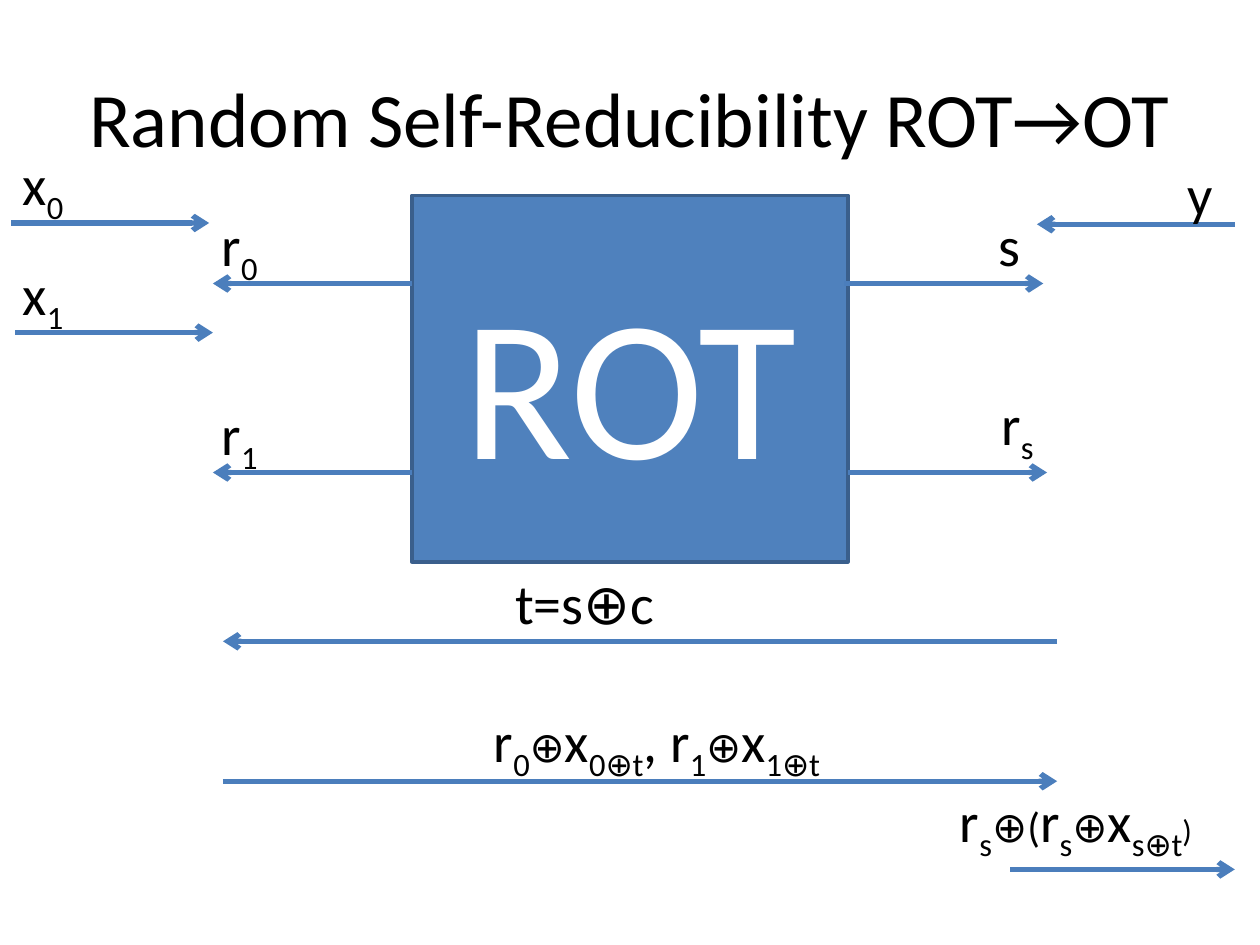
"""Build a slide showing how random oblivious transfer reduces to oblivious transfer."""
from dataclasses import dataclass
from typing import Optional

from lxml import etree
from pptx import Presentation
from pptx import util as u
from pptx.dml.color import RGBColor
from pptx.enum import shapes, text
from pptx.oxml.ns import qn

FONT = "Calibri"
BLACK = RGBColor(0x00, 0x00, 0x00)
WHITE = RGBColor(0xFF, 0xFF, 0xFF)
BOX_FILL = RGBColor(0x4F, 0x81, 0xBD)
BOX_LINE = RGBColor(0x3A, 0x5F, 0x8C)
ARROW_BLUE = RGBColor(0x4B, 0x7E, 0xBC)

COLUMNS, ROWS = 100, 75
WIDTH, HEIGHT = u.Inches(10), u.Inches(7.5)
LABEL_HEIGHT = 6.4
BOX_LEFT, BOX_RIGHT = 32.7, 67.3
SENDER, RECEIVER = 17.7, 83.9
UPPER_ROW, LOWER_ROW = 22.5, 37.5


@dataclass(frozen=True)
class Piece:
    """A stretch of label text, optionally resized or lowered."""
    content: str
    size: Optional[int] = None
    lowered: bool = False


@dataclass(frozen=True)
class Label:
    """A formula with its left, top and width on the grid."""
    left: float
    top: float
    width: float
    pieces: tuple[Piece, ...]
    wrap: bool = False


@dataclass(frozen=True)
class Arrow:
    """A horizontal arrow on one grid row, pointing at its end column."""
    start: float
    end: float
    row: float


def indexed(letter: str, index: str) -> tuple[Piece, Piece]:
    """Return a letter with a subscript."""
    return Piece(letter), Piece(index, lowered=True)


XOR = Piece("⊕", 24)

ARROWS = (
    Arrow(67, 82.8, UPPER_ROW),
    Arrow(BOX_RIGHT, 83.1, LOWER_ROW),
    Arrow(BOX_LEFT, 16.9, UPPER_ROW),
    Arrow(BOX_LEFT, 16.9, LOWER_ROW),
    Arrow(0.9, 16.6, 17.7),
    Arrow(1.2, 16.9, 26.4),
    Arrow(98, 82.3, 17.8),
    Arrow(RECEIVER, SENDER, 50.9),
    Arrow(SENDER, RECEIVER, 62),
    Arrow(80.2, 98, 69),
)

LABELS = (
    Label(0.8, 11.4, 5.5, indexed("x", "0")),
    Label(0.8, 20.1, 5.5, indexed("x", "1")),
    Label(16.6, 16.2, 5.1, indexed("r", "0")),
    Label(16.6, 31.2, 5.1, indexed("r", "1")),
    Label(78.3, 16.2, 3.8, (Piece("s"),)),
    Label(78.5, 30.4, 4.7, indexed("r", "s")),
    Label(93.3, 12.2, 4.1, (Piece("y"),)),
    Label(39.9, 44.6, 26, (Piece("t=s⊕c"),), wrap=True),
    Label(38.2, 55.6, 29.9,
          (*indexed("r", "0"), XOR, *indexed("x", "0⊕t"),
           *indexed(", r", "1"), XOR, *indexed("x", "1⊕t")), wrap=True),
    Label(75.2, 61.9, 22.8,
          (*indexed("r", "s"), Piece("⊕(", 24), *indexed("r", "s"), XOR,
           *indexed("x", "s⊕t"), Piece(")", 18)), wrap=True),
)


def across(columns: float) -> u.Emu:
    """Convert grid columns to a length."""
    return u.Emu(round(WIDTH * columns / COLUMNS))


def down(rows: float) -> u.Emu:
    """Convert grid rows to a length."""
    return u.Emu(round(HEIGHT * rows / ROWS))


def place(left: float, top: float, width: float, height: float) -> tuple[u.Emu, ...]:
    """Convert a grid rectangle to lengths."""
    return across(left), down(top), across(width), down(height)


def style_paragraph(paragraph, size: int, color: RGBColor, alignment) -> None:
    """Set the font and alignment of a paragraph."""
    paragraph.alignment = alignment
    paragraph.font.name = FONT
    paragraph.font.size = u.Pt(size)
    paragraph.font.color.rgb = color


def write_centred(shape, content: str, size: int, color: RGBColor) -> None:
    """Write one line in the middle of a shape."""
    frame = shape.text_frame
    frame.word_wrap = True
    frame.vertical_anchor = text.MSO_ANCHOR.MIDDLE
    frame.text = content
    style_paragraph(frame.paragraphs[0], size, color, text.PP_ALIGN.CENTER)


def draw_box(slide) -> None:
    """Draw the central ROT box."""
    shape = slide.shapes.add_shape(
        shapes.MSO_SHAPE.RECTANGLE,
        *place(BOX_LEFT, 15.5, BOX_RIGHT - BOX_LEFT, 29.1))
    shape.shadow.inherit = False
    shape.fill.solid()
    shape.fill.fore_color.rgb = BOX_FILL
    shape.line.color.rgb = BOX_LINE
    shape.line.width = u.Pt(2)
    write_centred(shape, "ROT", 115, WHITE)


def draw_arrow(slide, arrow: Arrow) -> None:
    """Draw a horizontal arrow with an open head."""
    connector = slide.shapes.add_connector(
        shapes.MSO_CONNECTOR.STRAIGHT, across(arrow.start), down(arrow.row),
        across(arrow.end), down(arrow.row))
    connector.line.color.rgb = ARROW_BLUE
    connector.line.width = u.Pt(3)
    properties = connector._element.spPr
    etree.SubElement(properties.find(qn("a:ln")), qn("a:tailEnd"), type="arrow")
    etree.SubElement(properties, qn("a:effectLst"))


def draw_label(slide, label: Label) -> None:
    """Draw a formula with its subscripts."""
    shape = slide.shapes.add_textbox(
        *place(label.left, label.top, label.width, LABEL_HEIGHT))
    frame = shape.text_frame
    frame.word_wrap = label.wrap
    frame.auto_size = text.MSO_AUTO_SIZE.SHAPE_TO_FIT_TEXT
    paragraph = frame.paragraphs[0]
    style_paragraph(paragraph, 32, BLACK, text.PP_ALIGN.LEFT)
    for piece in label.pieces:
        run = paragraph.add_run()
        run.text = piece.content
        if piece.size:
            run.font.size = u.Pt(piece.size)
        if piece.lowered:
            run._r.get_or_add_rPr().set("baseline", "-25000")


def main() -> None:
    """Build and save the presentation."""
    presentation = Presentation()
    presentation.slide_width, presentation.slide_height = WIDTH, HEIGHT
    slide = presentation.slides.add_slide(presentation.slide_layouts[6])
    title = slide.shapes.add_textbox(*place(5, 3, 90, 12.5))
    write_centred(title, "Random Self-Reducibility ROT→OT", 44, BLACK)
    draw_box(slide)
    for arrow in ARROWS:
        draw_arrow(slide, arrow)
    for label in LABELS:
        draw_label(slide, label)
    presentation.save("out.pptx")


if __name__ == "__main__":
    main()
